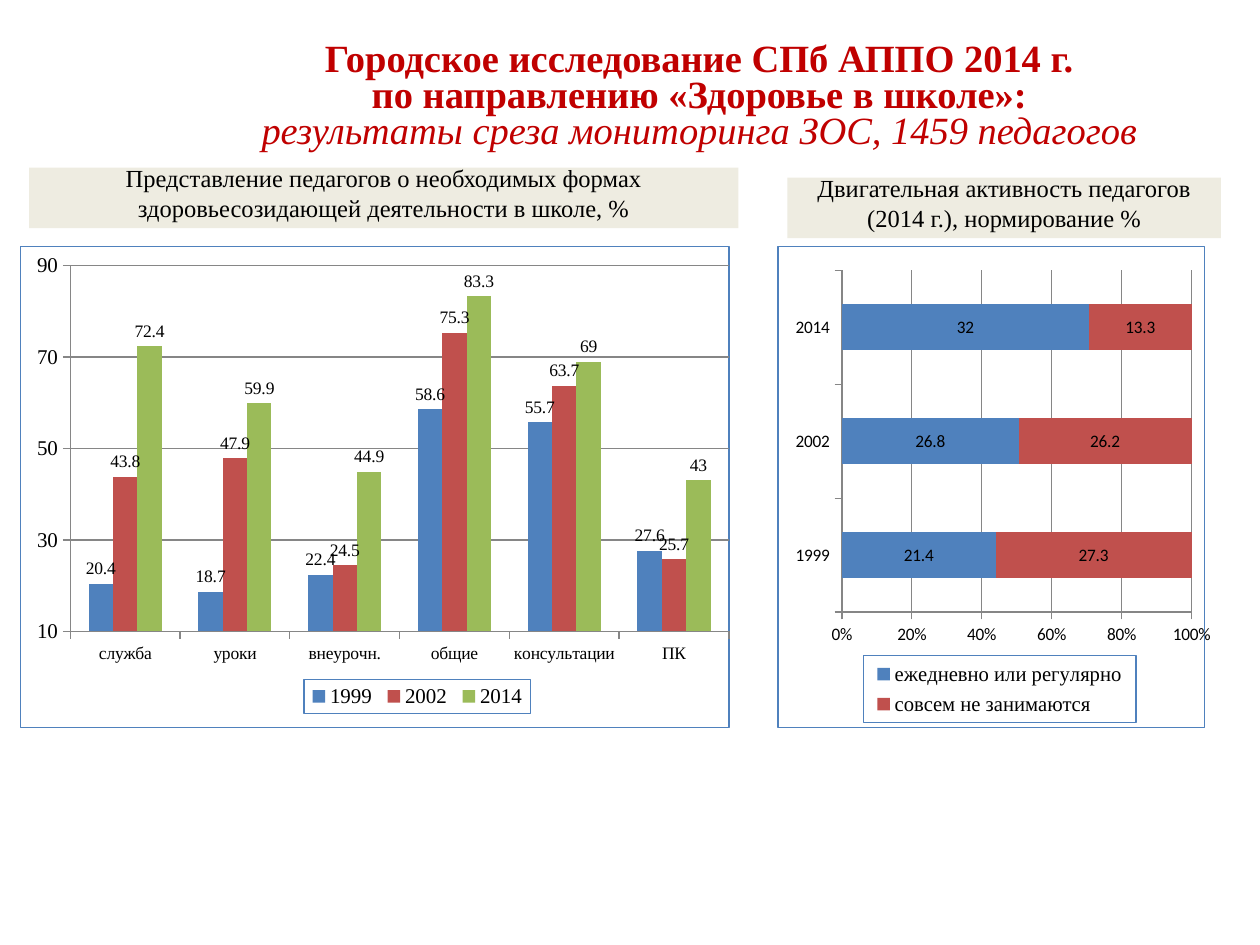
from pptx import Presentation
from pptx.chart.data import CategoryChartData
from pptx.dml.color import RGBColor
from pptx.enum.chart import XL_CHART_TYPE, XL_LABEL_POSITION, XL_LEGEND_POSITION, XL_TICK_MARK
from pptx.enum.shapes import MSO_SHAPE
from pptx.enum.text import MSO_ANCHOR, MSO_AUTO_SIZE, PP_ALIGN
from pptx.oxml import parse_xml
from pptx.oxml.ns import nsdecls, qn
from pptx.util import Pt

WHITE = RGBColor(0xFF, 0xFF, 0xFF)
BLACK = RGBColor(0, 0, 0)
DARK_RED = RGBColor(0xC0, 0, 0)
SAND = RGBColor(0xEE, 0xEC, 0xE1)
GRID_GREY = RGBColor(0x86, 0x86, 0x86)
BLUE = RGBColor(0x4F, 0x81, 0xBD)
RED = RGBColor(0xC0, 0x50, 0x4D)
GREEN = RGBColor(0x9B, 0xBB, 0x59)
SERIES_COLOURS = [BLUE, RED, GREEN]
SERIF = "Times New Roman"
SANS = "Calibri"

TITLE_LINES = [
    ("Городское исследование СПб АППО 2014 г.", {"bold": True, "italic": False}),
    ("по направлению «Здоровье в школе»:", {"bold": True, "italic": False}),
    ("результаты среза мониторинга ЗОС, 1459 педагогов", {"bold": False, "italic": True}),
]
FORMS_CATEGORIES = ["служба", "уроки", "внеурочн.", "общие", "консультации", "ПК"]
FORMS_SERIES = {
    "1999": [20.4, 18.7, 22.4, 58.6, 55.7, 27.6],
    "2002": [43.8, 47.9, 24.5, 75.3, 63.7, 25.7],
    "2014": [72.4, 59.9, 44.9, 83.3, 69, 43],
}
ACTIVITY_CATEGORIES = ["1999", "2002", "2014"]
ACTIVITY_SERIES = {
    "ежедневно или регулярно": [21.4, 26.8, 32],
    "совсем не занимаются": [27.3, 26.2, 13.3],
}


def apply_format(target, values):
    """Set every named value on the target."""
    for name, value in values.items():
        setattr(target, name, value)


def format_font(font, face, size, colour=BLACK, **styles):
    """Give a font its face, size, colour and styles."""
    apply_format(font, {"name": face, "size": Pt(size), **styles})
    font.color.rgb = colour


def place(part, left, top, width, height):
    """Move and size a part of the slide in points."""
    apply_format(part, {"left": Pt(left), "top": Pt(top), "width": Pt(width), "height": Pt(height)})


def add_title(slide):
    """Fill the title placeholder with the three heading lines."""
    title = slide.shapes.title
    place(title, 101.5, 28, 596, 56)
    title.fill.solid()
    title.fill.fore_color.rgb = WHITE
    frame = title.text_frame
    apply_format(frame, {
        "auto_size": MSO_AUTO_SIZE.NONE, "word_wrap": True, "vertical_anchor": MSO_ANCHOR.MIDDLE,
        "margin_left": 0, "margin_right": 0, "margin_top": 0, "margin_bottom": 0,
    })
    frame.text = "\n".join(line for line, _ in TITLE_LINES)
    for paragraph, (_, styles) in zip(frame.paragraphs, TITLE_LINES):
        apply_format(paragraph, {"alignment": PP_ALIGN.CENTER, "line_spacing": Pt(20.8)})
        format_font(paragraph.runs[0].font, SERIF, 22, DARK_RED, **styles)


def add_caption(slide, text, left, top, width):
    """Add a sand-coloured caption above a chart."""
    caption = slide.shapes.add_shape(
        MSO_SHAPE.RECTANGLE, Pt(left), Pt(top), Pt(width), Pt(34.6))
    caption.shadow.inherit = False
    caption.fill.solid()
    caption.fill.fore_color.rgb = SAND
    caption.line.fill.background()
    frame = caption.text_frame
    apply_format(frame, {"word_wrap": True, "vertical_anchor": MSO_ANCHOR.BOTTOM})
    paragraph = frame.paragraphs[0]
    paragraph.alignment = PP_ALIGN.CENTER
    paragraph.text = text
    format_font(paragraph.runs[0].font, SERIF, 14)


def manual_layout(target, box):
    """Build a manual layout element from fractions of the chart."""
    inner = '<c:layoutTarget val="inner"/>' if target == "plot" else ""
    modes = '<c:xMode val="edge"/><c:yMode val="edge"/>'
    sizes = "".join(f'<c:{side} val="{value}"/>' for side, value in zip("xywh", box))
    return parse_xml(
        f'<c:layout {nsdecls("c")}><c:manualLayout>{inner}{modes}{sizes}'
        '</c:manualLayout></c:layout>')


def remove_layout(element):
    """Drop the automatic layout of a chart part."""
    for layout in element.findall(qn("c:layout")):
        element.remove(layout)


def add_border(element):
    """Draw a thin blue frame around a chart part that has text properties."""
    element.find(qn("c:txPr")).addprevious(parse_xml(
        f'<c:spPr {nsdecls("c", "a")}><a:noFill/><a:ln w="{Pt(0.75)}">'
        f'<a:solidFill><a:srgbClr val="{BLUE}"/></a:solidFill></a:ln></c:spPr>'))


def format_axis(axis, face, size):
    """Give an axis its ticks, line and label font."""
    apply_format(axis, {
        "major_tick_mark": XL_TICK_MARK.OUTSIDE, "minor_tick_mark": XL_TICK_MARK.NONE})
    format_line(axis.format.line)
    format_font(axis.tick_labels.font, face, size)


def format_line(line):
    """Give a chart line its grey colour and width."""
    line.color.rgb = GRID_GREY
    line.width = Pt(0.75)


def format_legend(chart, box):
    """Place the framed legend below the plot."""
    chart.has_legend = True
    legend = chart.legend
    apply_format(legend, {"position": XL_LEGEND_POSITION.BOTTOM, "include_in_layout": False})
    format_font(legend.font, SERIF, 12)
    element = legend._element
    remove_layout(element)
    element.find(qn("c:legendPos")).addnext(manual_layout("legend", box))
    add_border(element)


def add_bar_chart(slide, kind, categories, series, left, width, plot_box, legend_box,
                  category_font, value_font, label_font, label_position, scale, overlap):
    """Add a framed bar chart with value labels and a legend."""
    chart_data = CategoryChartData()
    chart_data.categories = categories
    for name, values in series.items():
        chart_data.add_series(name, values)
    chart = slide.shapes.add_chart(
        kind, Pt(left), Pt(140.4), Pt(width), Pt(275.8), chart_data).chart
    chart.has_title = False
    format_font(chart.font, SANS, 10)
    add_border(chart._chartSpace)

    plot = chart.plots[0]
    apply_format(plot, {"gap_width": 150, "overlap": overlap, "vary_by_categories": False})
    for bars, colour in zip(plot.series, SERIES_COLOURS):
        bars.format.fill.solid()
        bars.format.fill.fore_color.rgb = colour
        labels = bars.data_labels
        apply_format(labels, {"show_value": True, "position": label_position})
        format_font(labels.font, label_font, 10)

    format_axis(chart.category_axis, *category_font)
    format_axis(chart.value_axis, *value_font)
    apply_format(chart.value_axis, {"has_major_gridlines": True, **scale})
    format_line(chart.value_axis.major_gridlines.format.line)
    format_legend(chart, legend_box)
    plot_area = chart._chartSpace.chart.plotArea
    remove_layout(plot_area)
    plot_area.insert(0, manual_layout("plot", plot_box))
    return chart


def main():
    """Build the slide and save it."""
    deck = Presentation()
    apply_format(deck, {"slide_width": Pt(720), "slide_height": Pt(540)})
    slide = deck.slides.add_slide(deck.slide_layouts[5])
    add_title(slide)
    add_bar_chart(
        slide, XL_CHART_TYPE.COLUMN_CLUSTERED, FORMS_CATEGORIES, FORMS_SERIES, 11.5, 405.4,
        (0.07, 0.04, 0.93, 0.76), (0.4, 0.9, 0.32, 0.07), (SERIF, 10), (SERIF, 12), SERIF,
        XL_LABEL_POSITION.OUTSIDE_END,
        {"minimum_scale": 10, "maximum_scale": 90, "major_unit": 20}, 0)
    activity = add_bar_chart(
        slide, XL_CHART_TYPE.BAR_STACKED_100, ACTIVITY_CATEGORIES, ACTIVITY_SERIES, 444.2, 247.7,
        (0.15, 0.05, 0.82, 0.71), (0.2, 0.85, 0.64, 0.14), (SANS, 10), (SANS, 10), SANS,
        XL_LABEL_POSITION.CENTER, {"maximum_scale": 1, "major_unit": 0.2}, 100)
    apply_format(activity.value_axis.tick_labels, {
        "number_format": "0%", "number_format_is_linked": False})
    add_caption(
        slide, "Представление педагогов о необходимых формах "
        "здоровьесозидающей деятельности в школе, %", 16.6, 95.8, 405.4)
    add_caption(
        slide, "Двигательная активность педагогов (2014 г.), нормирование %", 450, 101.5, 247.7)
    deck.save("out.pptx")


if __name__ == "__main__":
    main()
